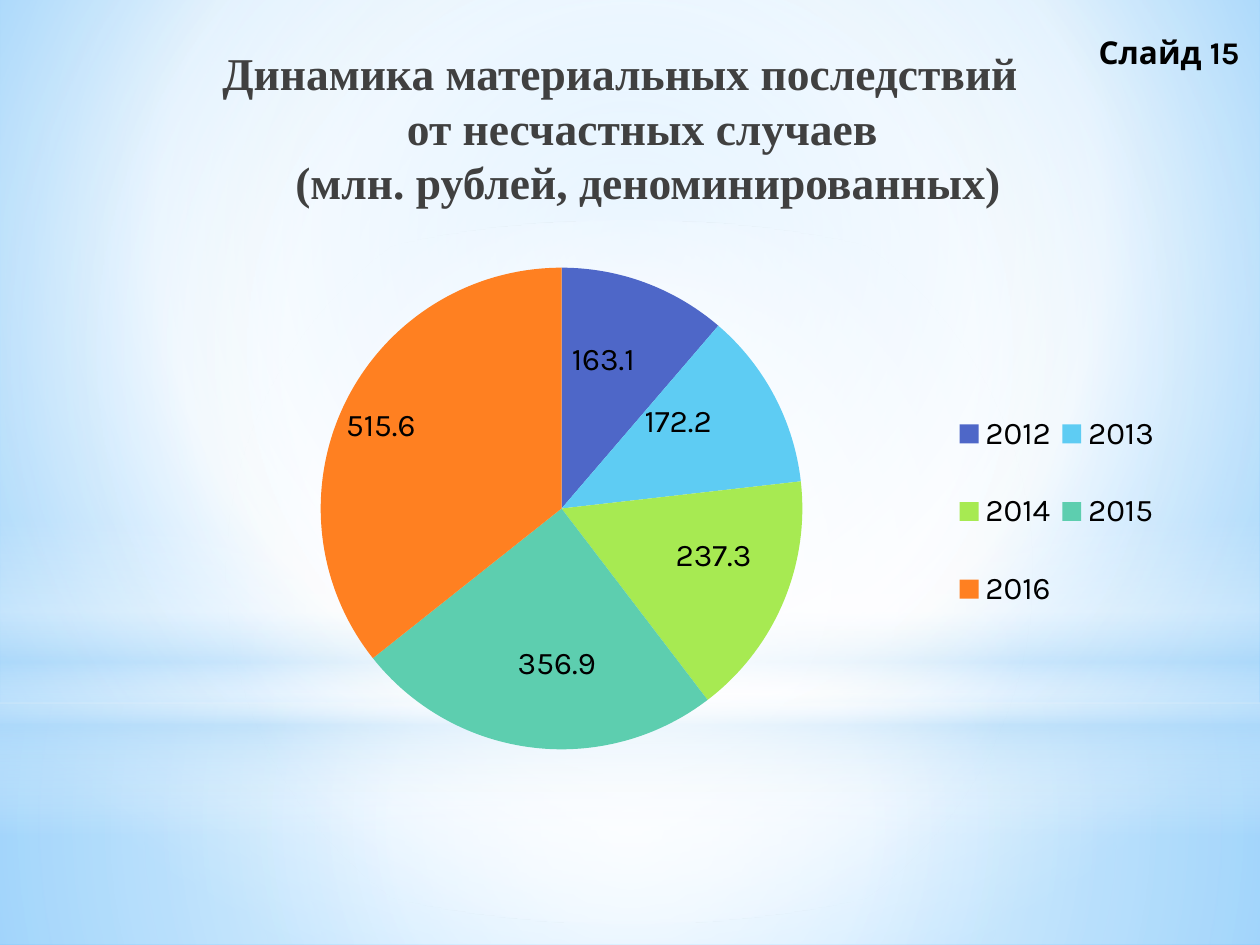
from typing import NamedTuple, Optional

from lxml.etree import SubElement
from pptx import Presentation
from pptx.chart.data import CategoryChartData
from pptx.dml.color import RGBColor
from pptx.enum.chart import XL_CHART_TYPE, XL_LABEL_POSITION, XL_LEGEND_POSITION
from pptx.enum.shapes import MSO_SHAPE
from pptx.enum.text import MSO_ANCHOR, MSO_AUTO_SIZE, PP_ALIGN
from pptx.oxml.ns import qn
from pptx.util import Inches, Pt

WIDE, HIGH = Inches(10), Inches(7.5)
BLACK = RGBColor(0x00, 0x00, 0x00)
GREY = RGBColor(0x40, 0x40, 0x40)
WHITE = RGBColor(0xFF, 0xFF, 0xFF)
PALE = RGBColor(0xB4, 0xDC, 0xFA)
SKY = RGBColor(0x9E, 0xD5, 0xFF)
AZURE = RGBColor(0x5B, 0xB9, 0xFF)
INDIGO = RGBColor(0x4E, 0x67, 0xC8)
CYAN = RGBColor(0x5E, 0xCC, 0xF3)
LIME = RGBColor(0xA7, 0xEA, 0x52)
TEAL = RGBColor(0x5D, 0xCE, 0xAF)
ORANGE = RGBColor(0xFF, 0x80, 0x21)
SERIF, SANS = "Times New Roman", "Karla"


class Stop(NamedTuple):
    place: int
    color: RGBColor
    alpha: int = 100


class Glow(NamedTuple):
    stops: list[Stop]
    focus: Optional[tuple[int, int, int, int]] = (50, 50, 50, 50)


class Layer(NamedTuple):
    kind: MSO_SHAPE
    top: float
    height: float
    glow: Glow


class Slice(NamedTuple):
    year: str
    value: float
    color: RGBColor
    right: float
    down: float


BACK = Glow([Stop(0, SKY), Stop(60, WHITE), Stop(100, AZURE)], (20, 10, 20, 60))
LAYERS = [
    Layer(MSO_SHAPE.RECTANGLE, 0.744, 0.256, Glow([
        Stop(0, WHITE, 91), Stop(37, WHITE, 76), Stop(100, PALE, 79)])),
    Layer(MSO_SHAPE.RECTANGLE, 0, 0.744, Glow([
        Stop(0, WHITE, 89), Stop(48, WHITE, 62), Stop(100, PALE, 79)])),
    Layer(MSO_SHAPE.RECTANGLE, 0.55, 0.333, Glow([
        Stop(0, WHITE, 0), Stop(29, WHITE, 30), Stop(45, PALE, 40),
        Stop(55, WHITE, 26), Stop(65, PALE, 60), Stop(100, WHITE, 0)], None)),
    Layer(MSO_SHAPE.OVAL, 0.233, 0.744, Glow([
        Stop(0, WHITE), Stop(56, WHITE, 0)])),
]
SLICES = [
    Slice("2012", 163.1, INDIGO, 0, -0.06),
    Slice("2013", 172.2, CYAN, 0.01, -0.05),
    Slice("2014", 237.3, LIME, 0.04, 0),
    Slice("2015", 356.9, TEAL, 0.01, 0.06),
    Slice("2016", 515.6, ORANGE, -0.07, -0.05),
]
TITLE = ["Динамика материальных последствий ", "от несчастных случаев ",
         "(млн. рублей, деноминированных)"]


def blend(owner, glow: Glow) -> None:
    grad = owner.find(".//" + qn("a:gradFill"))
    for child in list(grad):
        grad.remove(child)
    group = SubElement(grad, qn("a:gsLst"))
    for stop in glow.stops:
        mark = SubElement(group, qn("a:gs"), pos=str(stop.place * 1000))
        color = SubElement(mark, qn("a:srgbClr"), val=str(stop.color))
        if stop.alpha < 100:
            SubElement(color, qn("a:alpha"), val=str(stop.alpha * 1000))
    if glow.focus:
        way = SubElement(grad, qn("a:path"), {"path": "circle"})
        sides = {side: str(part * 1000) for side, part in zip("ltrb", glow.focus)}
        SubElement(way, qn("a:fillToRect"), sides)
    else:
        SubElement(grad, qn("a:lin"), ang="5400000", scaled="0")


def paint(slide, layer: Layer) -> None:
    shape = slide.shapes.add_shape(
        layer.kind, 0, int(HIGH * layer.top), WIDE, int(HIGH * layer.height))
    shape.shadow.inherit = False
    shape.line.fill.background()
    shape.fill.gradient()
    blend(shape._element, layer.glow)


def place(layout, **sizes: float) -> None:
    manual = SubElement(layout, qn("c:manualLayout"))
    if "w" in sizes:
        for tag in ("xMode", "yMode"):
            SubElement(manual, qn("c:" + tag), val="edge")
    for tag, size in sizes.items():
        SubElement(manual, qn("c:" + tag), val=str(size))


def write(para, text: str, face: str, size: int, color: RGBColor) -> None:
    run = para.add_run()
    run.text = text
    font = run.font
    font.name, font.size, font.bold = face, Pt(size), True
    font.color.rgb = color


def head(slide) -> None:
    title = slide.shapes.title
    slide.shapes._spTree.append(title._element)
    title.left, title.top = Inches(1.41), Inches(0.31)
    title.width, title.height = Inches(7.12), Inches(1.09)
    frame = title.text_frame
    frame.auto_size = MSO_AUTO_SIZE.NONE
    frame.vertical_anchor = MSO_ANCHOR.TOP
    para = frame.paragraphs[0]
    para.alignment = PP_ALIGN.CENTER
    props = para._p.get_or_add_pPr()
    props.set("marL", str(Inches(0.35)))
    props.set("indent", str(Inches(-0.35)))
    for row, text in enumerate(TITLE):
        if row:
            para.add_line_break()
        write(para, text, SERIF, 26, GREY)


def pie(slide) -> None:
    data = CategoryChartData()
    data.categories = [part.year for part in SLICES]
    data.add_series("Series 1", [part.value for part in SLICES])
    chart = slide.shapes.add_chart(
        XL_CHART_TYPE.PIE, Inches(1.14), Inches(1.7),
        Inches(8.19), Inches(4.72), data).chart
    chart.has_title = False
    chart.font.name, chart.font.size = SANS, Pt(18)
    chart.font.color.rgb = BLACK
    chart.has_legend = True
    legend = chart.legend
    legend.position = XL_LEGEND_POSITION.RIGHT
    legend.include_in_layout = False
    plot = chart.plots[0]
    plot.vary_by_categories = True
    area = chart._chartSpace.chart.plotArea
    for old in area.findall(qn("c:layout")):
        area.remove(old)
    frame = area.makeelement(qn("c:layout"))
    area.insert(0, frame)
    SubElement(SubElement(frame, qn("c:manualLayout")), qn("c:layoutTarget"), val="inner")
    manual = frame[0]
    for tag in ("xMode", "yMode"):
        SubElement(manual, qn("c:" + tag), val="edge")
    for tag, size in {"x": 0.17, "y": 0.09, "w": 0.47, "h": 0.81}.items():
        SubElement(manual, qn("c:" + tag), val=str(size))
    box = legend._element
    for old in box.findall(qn("c:layout")):
        box.remove(old)
    spot = box.makeelement(qn("c:layout"))
    box.find(qn("c:legendPos")).addnext(spot)
    place(spot, x=0.78, y=0.27, w=0.21, h=0.46)
    series = plot.series[0]
    labels = series.data_labels
    labels.show_value = True
    labels.position = XL_LABEL_POSITION.CENTER
    for index, part in enumerate(SLICES):
        point = series.points[index]
        point.format.fill.solid()
        point.format.fill.fore_color.rgb = part.color
        point.data_label.position = XL_LABEL_POSITION.CENTER
        label = labels._element.findall(qn("c:dLbl"))[index]
        shift = label.makeelement(qn("c:layout"))
        label.find(qn("c:idx")).addnext(shift)
        place(shift, x=part.right, y=part.down)


def tag(slide) -> None:
    box = slide.shapes.add_textbox(Inches(8.62), Inches(0.21), Inches(1.38), Inches(0.4))
    box.text_frame.word_wrap = True
    box.text_frame.auto_size = MSO_AUTO_SIZE.SHAPE_TO_FIT_TEXT
    write(box.text_frame.paragraphs[0], "Слайд 15", SANS, 18, BLACK)


def main() -> None:
    deck = Presentation()
    deck.slide_width, deck.slide_height = WIDE, HIGH
    slide = deck.slides.add_slide(deck.slide_layouts[5])
    slide.background.fill.gradient()
    blend(slide._element, BACK)
    for layer in LAYERS:
        paint(slide, layer)
    head(slide)
    pie(slide)
    tag(slide)
    deck.save("out.pptx")


if __name__ == "__main__":
    main()
